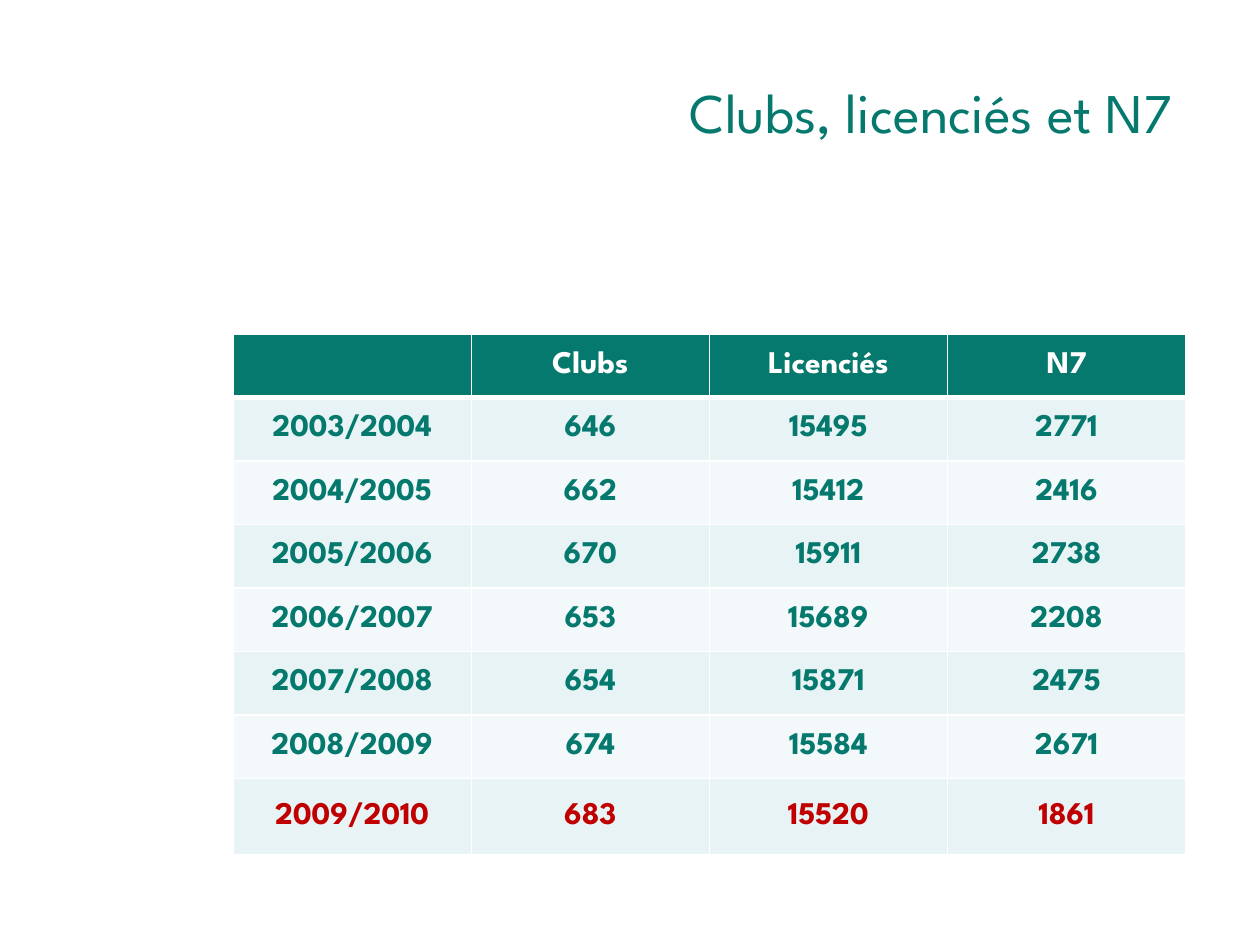
from lxml import etree
from pptx import Presentation
from pptx.dml.color import RGBColor
from pptx.enum import text
from pptx.oxml import ns
from pptx.util import Cm, Pt

TEAL = RGBColor(0x05, 0x79, 0x6E)
WHITE = RGBColor(0xFF, 0xFF, 0xFF)
RED = RGBColor(0xC0, 0x00, 0x00)
BAND_DARK = RGBColor(0xE7, 0xF3, 0xF4)
BAND_LIGHT = RGBColor(0xF3, 0xF9, 0xFA)
FONT = "League Spartan"

ROWS = [
    ("", "Clubs", "Licenciés", "N7"),
    ("2003/2004", "646", "15495", "2771"),
    ("2004/2005", "662", "15412", "2416"),
    ("2005/2006", "670", "15911", "2738"),
    ("2006/2007", "653", "15689", "2208"),
    ("2007/2008", "654", "15871", "2475"),
    ("2008/2009", "674", "15584", "2671"),
    ("2009/2010", "683", "15520", "1861"),
]
LAST = len(ROWS) - 1


def write(para, words, color, align, **formats):
    para.alignment = align
    span = para.add_run()
    span.text = words
    span.font.color.rgb = color
    for name, value in {"name": FONT, **formats}.items():
        setattr(span.font, name, value)


def add_border(cell, side, width):
    line = etree.SubElement(cell._tc.get_or_add_tcPr(), ns.qn(f"a:ln{side}"), w=str(Pt(width)))
    fill = etree.SubElement(line, ns.qn("a:solidFill"))
    etree.SubElement(fill, ns.qn("a:srgbClr"), val=str(WHITE))


deck = Presentation()
deck.slide_width, deck.slide_height = Cm(25.4), Cm(19.05)
page = deck.slides.add_slide(deck.slide_layouts[6])

title = page.shapes.add_textbox(Cm(0), Cm(1.32), Cm(23.9), Cm(1.85)).text_frame
title.word_wrap = True
title.vertical_anchor = text.MSO_ANCHOR.MIDDLE
write(title.paragraphs[0], "Clubs, licenciés et N7", TEAL, text.PP_ALIGN.RIGHT, size=Pt(32))

table = page.shapes.add_table(
    len(ROWS), len(ROWS[0]), Cm(4.7), Cm(6.73), Cm(19.2), Cm(10.51)
).table
for column in table.columns:
    column.width = Cm(4.8)

for r, values in enumerate(ROWS):
    table.rows[r].height = Cm(1.55 if r == LAST else 1.28)
    if r == 0:
        fill, color = TEAL, WHITE
    else:
        fill = BAND_DARK if r % 2 else BAND_LIGHT
        color = RED if r == LAST else TEAL
    for c, value in enumerate(values):
        cell = table.cell(r, c)
        cell.vertical_anchor = text.MSO_ANCHOR.MIDDLE
        if r < LAST:
            margins = {"left": 0.13, "top": 0, "right": 0.13, "bottom": 0}
            for side, margin in margins.items():
                setattr(cell, f"margin_{side}", Cm(margin))
        for side in "LRTB":
            add_border(cell, side, 3 if r == 0 and side == "B" else 1)
        cell.fill.solid()
        cell.fill.fore_color.rgb = fill
        if value:
            write(cell.text_frame.paragraphs[0], value, color, text.PP_ALIGN.CENTER,
                  size=Pt(18), bold=True)

deck.save("out.pptx")
